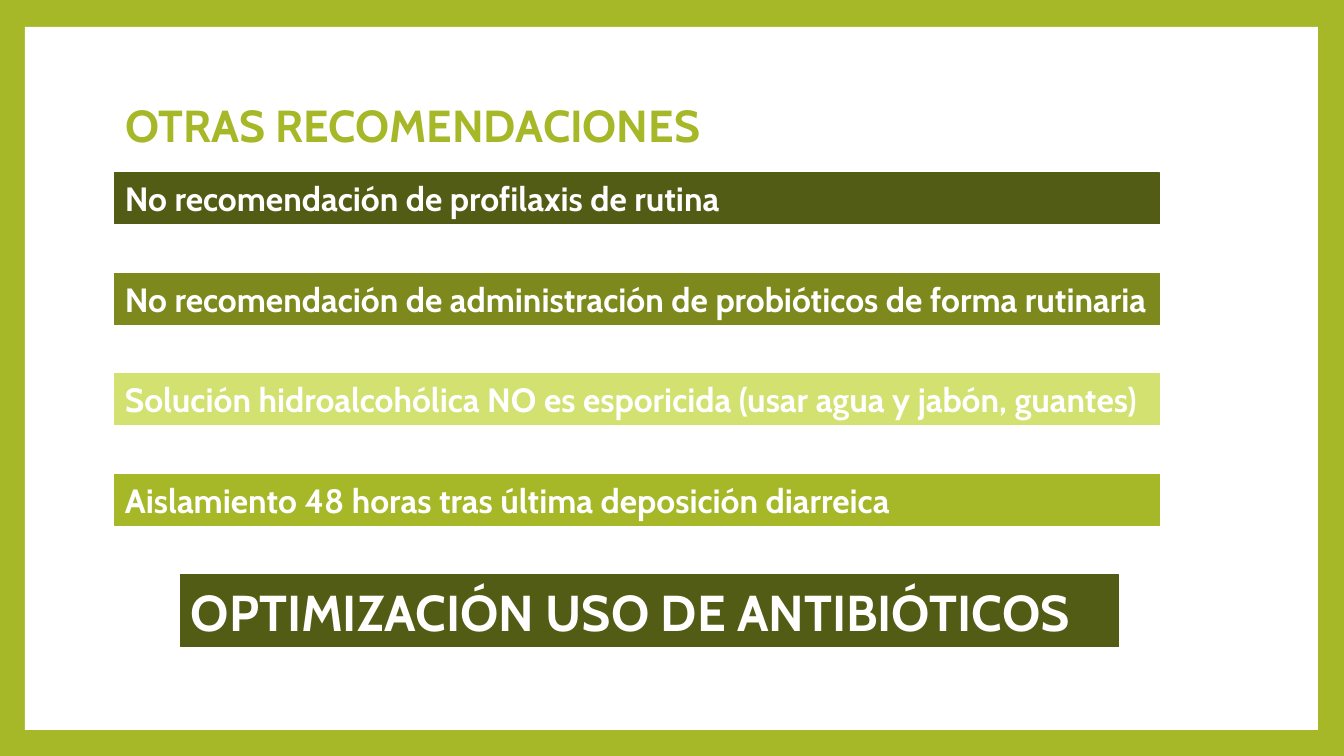
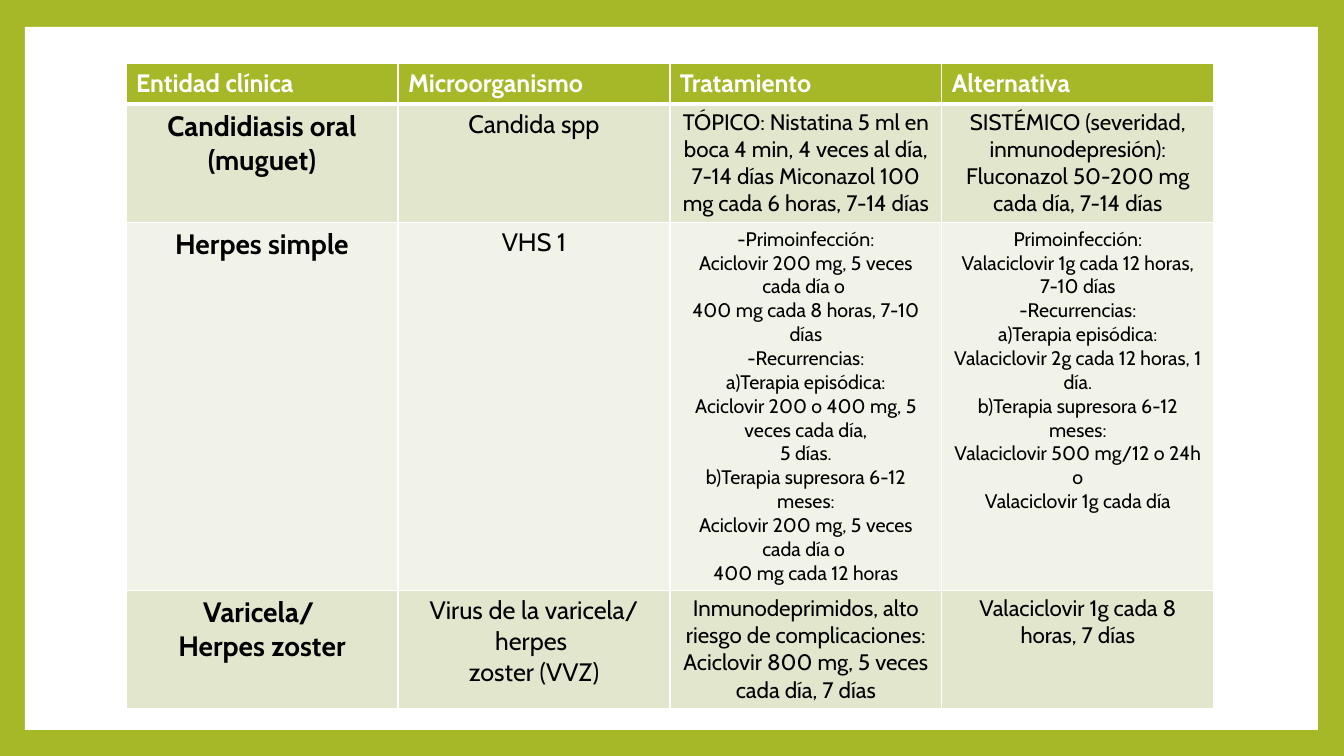
from lxml.etree import SubElement
from pptx import Presentation
from pptx.dml.color import RGBColor
from pptx.enum.shapes import MSO_SHAPE
from pptx.enum.text import MSO_ANCHOR, MSO_AUTO_SIZE, PP_ALIGN
from pptx.oxml.ns import qn
from pptx.util import Emu, Pt

LIME, DARK, OLIVE, PALE = "A6B727", "535C14", "7D891D", "D3E171"
WHITE, BLACK = "FFFFFF", "000000"
BANDS = "E1E6CD", "F1F3E8"
FONT = "Cabin"

BARS = [
    ("No recomendación de profilaxis de rutina", DARK),
    ("No recomendación de administración de probióticos de forma rutinaria", OLIVE),
    ("Solución hidroalcohólica NO es esporicida (usar agua y jabón, guantes)", PALE),
    ("Aislamiento 48 horas tras última deposición diarreica", LIME),
]
HEADS = ["Entidad clínica", "Microorganismo", "Tratamiento", "Alternativa"]
# Each row: dose text size, then its cells
CASES = [
    (16, ["Candidiasis oral (muguet)", "Candida spp",
          "TÓPICO: Nistatina 5 ml en boca 4 min, 4 veces al día, "
          "7-14 días Miconazol 100 mg cada 6 horas, 7-14 días",
          "SISTÉMICO (severidad, inmunodepresión):\n"
          "Fluconazol 50-200 mg cada día, 7-14 días"]),
    (14, ["Herpes simple", "VHS 1",
          "-Primoinfección:\n"
          "Aciclovir 200 mg, 5 veces cada día o \n"
          "400 mg cada 8 horas, 7-10 días\n"
          "-Recurrencias:\n"
          "a)Terapia episódica:\n"
          "Aciclovir 200 o 400 mg, 5 veces cada día,\n"
          "5 días.\n"
          "b)Terapia supresora 6-12 meses:\n"
          "Aciclovir 200 mg, 5 veces cada día o \n"
          "400 mg cada 12 horas",
          "Primoinfección:\n"
          "Valaciclovir 1g cada 12 horas, 7-10 días\n"
          "-Recurrencias:\n"
          "a)Terapia episódica:\n"
          "Valaciclovir 2g cada 12 horas, 1 día.\n"
          "b)Terapia supresora 6-12 meses:\n"
          "Valaciclovir 500 mg/12 o 24h o\n"
          "Valaciclovir 1g cada día"]),
    (16, ["Varicela/ \nHerpes zoster",
          "Virus de la varicela/ herpes \nzoster (VVZ)",
          "Inmunodeprimidos, alto riesgo de complicaciones:\n"
          "Aciclovir 800 mg, 5 veces cada día, 7 días",
          "Valaciclovir 1g cada 8 horas, 7 días"]),
]


def px(n):
    return Emu(round(n * 914400 / 100.8))


def tint(code):
    return RGBColor.from_string(code)


def paint(item, code):
    item.fill.solid()
    item.fill.fore_color.rgb = tint(code)


def write(frame, text, size, color, bold=True, align=PP_ALIGN.LEFT):
    frame.text = text
    look = {"name": FONT, "size": Pt(size), "bold": bold}
    for para in frame.paragraphs:
        para.alignment = align
        for run in para.runs:
            for key, value in look.items():
                setattr(run.font, key, value)
            run.font.color.rgb = tint(color)


def block(slide, box, color):
    shape = slide.shapes.add_shape(MSO_SHAPE.RECTANGLE, *map(px, box))
    shape.shadow.inherit = False
    paint(shape, color)
    return shape


def frame(master, slide):
    """Give the master its lime ground and a white panel, drawn first on slide."""
    paint(master.background, LIME)
    panel = block(slide, (25, 27, 1293, 703), WHITE)
    panel.line.fill.background()
    panel.element.nvSpPr.cNvPr.id = 99
    master.shapes.element.insert(2, panel.element)


def title(slide, box, text):
    head = slide.shapes.title
    for key, value in zip(("left", "top", "width", "height"), box):
        setattr(head, key, px(value))
    write(head.text_frame, text, 32, LIME)
    head.text_frame.auto_size = MSO_AUTO_SIZE.NONE
    head.text_frame.vertical_anchor = MSO_ANCHOR.MIDDLE


def bar(slide, box, text, color, size):
    shape = block(slide, box, color)
    shape.line.color.rgb = tint(color)
    shape.line.width = Pt(0.75)
    shape.text_frame.word_wrap = True
    shape.text_frame.vertical_anchor = MSO_ANCHOR.MIDDLE
    write(shape.text_frame, text, size, WHITE)


def advice(slide, box):
    """Stack the bars evenly, with the larger closing bar below."""
    left, top, width, height = box
    step = height / len(BARS)
    for i, (text, color) in enumerate(BARS):
        bar(slide, (left, top + i * step, width, 51), text, color, 24)
    bar(slide, (left + 66, top + height, 938, 72),
        "OPTIMIZACIÓN USO DE ANTIBIÓTICOS", DARK, 36)


def edges(cell, top, bottom):
    props = cell._tc.get_or_add_tcPr()
    widths = {"lnL": 1, "lnR": 1, "lnT": top, "lnB": bottom}
    for i, (tag, width) in enumerate(widths.items()):
        line = SubElement(props, qn("a:" + tag), w=str(Pt(width)))
        fill = SubElement(line, qn("a:solidFill"))
        SubElement(fill, qn("a:srgbClr"), val=WHITE)
        props.insert(i, line)


def chart(slide, box, heights):
    """Draw the treatment table."""
    rows = [(18, HEADS)] + CASES
    table = slide.shapes.add_table(len(rows), len(HEADS), *map(px, box)).table
    table.horz_banding = False
    for col in table.columns:
        col.width = px(box[2] // len(HEADS))
    for r, (dose, texts) in enumerate(rows):
        table.rows[r].height = px(heights[r])
        for c, text in enumerate(texts):
            cell = table.cell(r, c)
            if r == 0:
                paint(cell, LIME)
                write(cell.text_frame, text, dose, WHITE)
            else:
                paint(cell, BANDS[(r - 1) % 2])
                size = (20, 18, dose, dose)[c]
                write(cell.text_frame, text, size, BLACK, c == 0, PP_ALIGN.CENTER)
            edges(cell, 3 if r == 1 else 1, 3 if r == 0 else 1)


def main():
    deck = Presentation()
    deck.slide_width, deck.slide_height = px(1344), px(756)
    tips = deck.slides.add_slide(deck.slide_layouts[5])
    frame(deck.slide_master, tips)
    title(tips, (115, 93, 610, 64), "OTRAS RECOMENDACIONES")
    advice(tips, (115, 173, 1045, 402))
    cures = deck.slides.add_slide(deck.slide_layouts[6])
    chart(cures, (126, 63, 1088, 644), (40, 118, 368, 118))
    deck.save("out.pptx")


if __name__ == "__main__":
    main()
